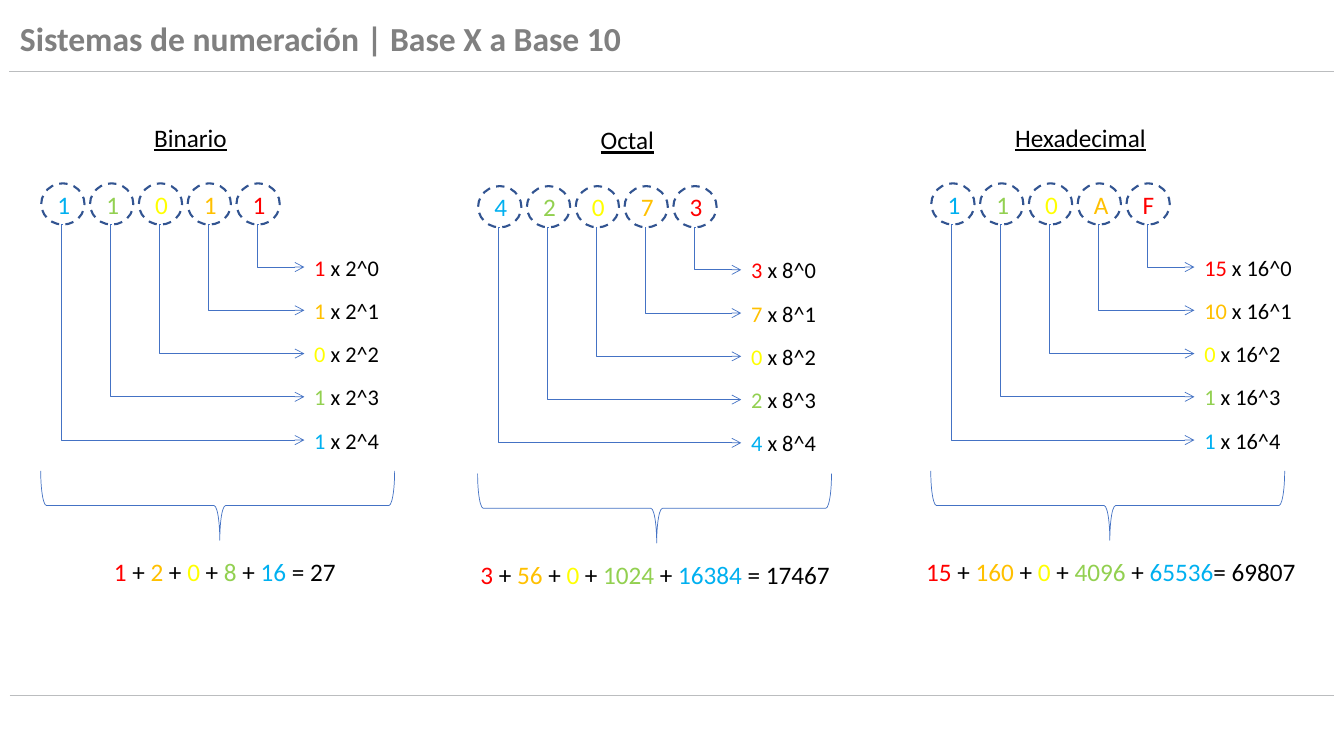
from lxml import etree
from pptx import Presentation
from pptx import util as u
from pptx.dml.color import RGBColor
from pptx.enum import dml, shapes, text
from pptx.oxml import ns

BLACK = RGBColor(0x00, 0x00, 0x00)
GREY = RGBColor(0x80, 0x80, 0x80)
RULE_GREY = RGBColor(0xBB, 0xBD, 0xBF)
ARROW_BLUE = RGBColor(0x44, 0x72, 0xC4)
RING_BLUE = RGBColor(0x32, 0x54, 0x91)
RED = RGBColor(0xFF, 0x00, 0x00)
ORANGE = RGBColor(0xFF, 0xC0, 0x00)
YELLOW = RGBColor(0xFF, 0xFF, 0x00)
GREEN = RGBColor(0x92, 0xD0, 0x50)
SKY = RGBColor(0x00, 0xB0, 0xF0)
POWER_COLORS = [RED, ORANGE, YELLOW, GREEN, SKY]

TITLE = "Sistemas de numeración | Base X a Base 10"
LEFT, CENTER = text.PP_ALIGN.LEFT, text.PP_ALIGN.CENTER
SYSTEMS = [
    {"name": "Binario", "name_width": 2.69, "base": 2, "left": 1.04, "drop": 0,
     "digits": "11011", "values": [1, 1, 0, 1, 1], "term_width": 2.29,
     "addends": [1, 2, 0, 8, 16], "total": " = 27",
     "sum_left": 2.62, "sum_width": 6.4, "sum_align": LEFT},
    {"name": "Octal", "name_width": 1.98, "base": 8, "left": 12.05, "drop": 0.07,
     "digits": "42073", "values": [3, 7, 0, 2, 4], "term_width": 2.29,
     "addends": [3, 56, 0, 1024, 16384], "total": " = 17467",
     "sum_left": 11.71, "sum_width": 9.6, "sum_align": CENTER},
    {"name": "Hexadecimal", "name_width": 3.99, "base": 16, "left": 23.47, "drop": 0,
     "digits": "110AF", "values": [15, 10, 0, 1, 1], "term_width": 3.25,
     "addends": [15, 160, 0, 4096, 65536], "total": "= 69807",
     "sum_left": 22.89, "sum_width": 10.21, "sum_align": CENTER},
]

NAME_CENTER, NAME_TOP = 3.76, 2.95
RING_TOP, RING_WIDTH, RING_HEIGHT, RING_PITCH = 4.62, 1.09, 1.04, 1.23
TERM_OFFSET, TERM_TOP, ARROW_TOP, ROW_PITCH = 6.63, 6.27, 6.73, 1.09
BRACE_OFFSET, BRACE_TOP, BRACE_WIDTH, BRACE_HEIGHT = 3.57, 8.28, 1.75, 8.92
SUM_TOP = 13.89


def write(frame, runs, size=18, align=CENTER, bold=None, underline=None, spacing=None):
    frame.word_wrap = True
    paragraph = frame.paragraphs[0]
    paragraph.alignment = align
    paragraph.line_spacing = spacing
    for words, color in runs:
        run = paragraph.add_run()
        run.text = words
        run.font.name = "Calibri"
        run.font.size = u.Pt(size)
        run.font.bold = bold
        run.font.underline = underline
        run.font.color.rgb = color


def add_label(slide, left, top, width, height, runs, **style):
    label = slide.shapes.add_textbox(*map(u.Cm, (left, top, width, height)))
    label.text_frame.auto_size = text.MSO_AUTO_SIZE.SHAPE_TO_FIT_TEXT
    write(label.text_frame, runs, **style)


def add_outline(slide, preset, left, top, width, height, color, weight):
    outline = slide.shapes.add_shape(preset, *map(u.Cm, (left, top, width, height)))
    outline.shadow.inherit = False
    outline.fill.background()
    outline.line.color.rgb = color
    outline.line.width = u.Pt(weight)
    return outline


def add_line(slide, kind, start, end, color, weight):
    line = slide.shapes.add_connector(kind, *map(u.Cm, start + end))
    line.line.color.rgb = color
    line.line.width = u.Pt(weight)
    etree.SubElement(line._element.spPr, ns.qn("a:effectLst"))
    return line


def add_elbow_arrow(slide, start, end):
    arrow = add_line(slide, shapes.MSO_CONNECTOR.ELBOW, start, end, ARROW_BLUE, 0.5)
    properties = arrow._element.spPr
    guides = properties.find(ns.qn("a:prstGeom")).get_or_add_avLst()
    etree.SubElement(guides, ns.qn("a:gd"), name="adj1", fmla="val -800")
    etree.SubElement(properties.find(ns.qn("a:ln")), ns.qn("a:tailEnd"), type="arrow")


def add_system(slide, system):
    left, drop = system["left"], system["drop"]
    add_label(slide, left + NAME_CENTER - system["name_width"] / 2, NAME_TOP + drop,
              system["name_width"], 1.02, [(system["name"], BLACK)], underline=True)

    for place, digit in enumerate(system["digits"]):
        power = len(system["digits"]) - 1 - place
        color = POWER_COLORS[power]
        ring_left = left + place * RING_PITCH
        ring = add_outline(slide, shapes.MSO_SHAPE.OVAL, ring_left, RING_TOP + drop,
                           RING_WIDTH, RING_HEIGHT, RING_BLUE, 1.5)
        ring.line.dash_style = dml.MSO_LINE.DASH
        write(ring.text_frame, [(digit, color)])

        row = power * ROW_PITCH + drop
        term_left = left + TERM_OFFSET
        add_elbow_arrow(slide, (ring_left + RING_WIDTH / 2, RING_TOP + RING_HEIGHT + drop),
                        (term_left, ARROW_TOP + row))
        add_label(slide, term_left, TERM_TOP + row, system["term_width"], 0.94,
                  [(f"{system['values'][power]} ", color),
                   (f"x {system['base']}^{power}", BLACK)], size=16, align=LEFT)

    brace = add_outline(slide, shapes.MSO_SHAPE.RIGHT_BRACE, left + BRACE_OFFSET,
                        BRACE_TOP + drop, BRACE_WIDTH, BRACE_HEIGHT, ARROW_BLUE, 0.5)
    brace.rotation = 90
    brace.adjustments[0] = 0.083
    brace.adjustments[1] = 0.494

    addition = []
    for addend, color in zip(system["addends"], POWER_COLORS):
        if addition:
            addition.append((" + ", BLACK))
        addition.append((str(addend), color))
    addition.append((system["total"], BLACK))
    add_label(slide, system["sum_left"], SUM_TOP + drop, system["sum_width"], 1.02,
              addition, align=system["sum_align"])


def main():
    deck = Presentation()
    deck.slide_width, deck.slide_height = u.Cm(33.87), u.Cm(19.05)
    slide = deck.slides.add_slide(deck.slide_layouts[5])

    title = slide.shapes.title
    title.left, title.top, title.width, title.height = map(u.Cm, (0.25, 0.38, 31.93, 1.3))
    title.text_frame.vertical_anchor = text.MSO_ANCHOR.MIDDLE
    write(title.text_frame, [(TITLE, GREY)], size=24, align=LEFT, bold=True, spacing=0.9)

    for rule_left, rule_top in [(0.23, 1.8), (0.25, 17.53)]:
        add_line(slide, shapes.MSO_CONNECTOR.STRAIGHT, (rule_left, rule_top),
                 (rule_left + 33.38, rule_top), RULE_GREY, 0.75)

    for system in SYSTEMS:
        add_system(slide, system)
    deck.save("out.pptx")


if __name__ == "__main__":
    main()
